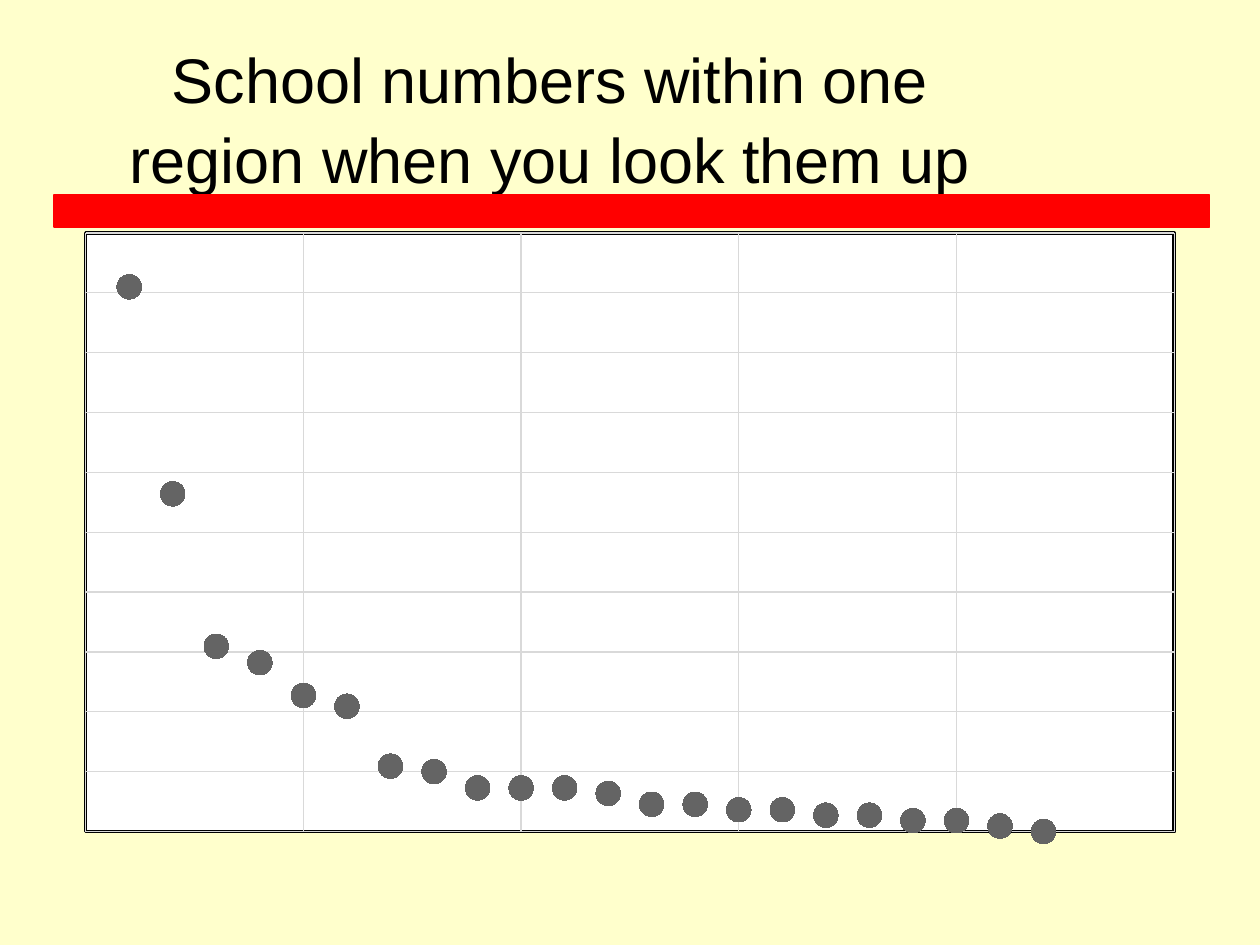
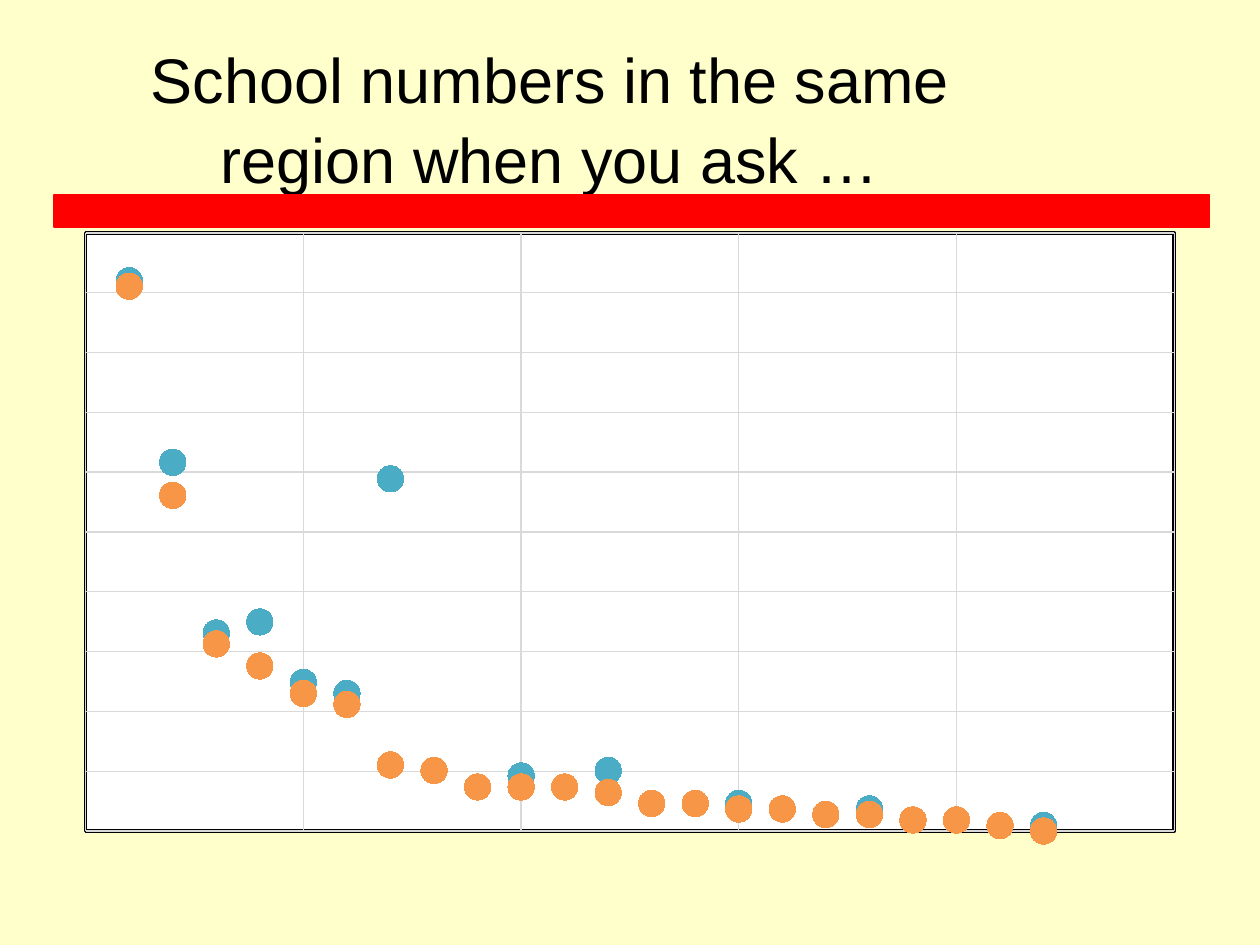
from dataclasses import dataclass

from lxml.etree import _Element
from pptx import Presentation
from pptx.chart.axis import ValueAxis
from pptx.chart.chart import Chart
from pptx.chart.data import XyChartData
from pptx.chart.series import XySeries
from pptx.dml.color import RGBColor
from pptx.enum.chart import XL_CHART_TYPE, XL_MARKER_STYLE
from pptx.enum.shapes import MSO_SHAPE
from pptx.enum.text import MSO_ANCHOR, PP_ALIGN
from pptx.oxml import parse_xml
from pptx.oxml.ns import nsdecls, qn
from pptx.slide import Slide
from pptx.util import Inches, Pt

CREAM, RED, BLACK, WHITE = "FFFFCC", "FF0000", "000000", "FFFFFF"
GREY, ORANGE, BLUE, GRID = "646464", "F79646", "4BACC6", "D9D9D9"
TITLE_BOX = (0.5, 0.3, 7.73, 1.25)
BAND_BOX = (0.43, 1.55, 9.17, 0.25)
CHART_BOX = (0.5, 1.75, 9, 4.95)
PLOT_AREA = {"x": 0.02, "y": 0.02, "w": 0.96, "h": 0.96}
RANK_MAX, RANK_STEP, ROWS = 25, 5, 10


@dataclass
class Counts:
    values: list[int]
    color: str


@dataclass
class SchoolSlide:
    title: str
    top: float
    marker_size: int
    series: list[Counts]


SLIDES = [
    SchoolSlide(
        "School numbers within one region when you look them up", 109.9, 14,
        [Counts([100, 62, 34, 31, 25, 23, 12, 11, 8, 8, 8,
                 7, 5, 5, 4, 4, 3, 3, 2, 2, 1, 0], GREY)]),
    SchoolSlide(
        "School numbers in the same region when you ask …", 108.7, 15,
        [Counts([99, 61, 34, 30, 25, 23, 12, 11, 8, 8, 8,
                 7, 5, 5, 4, 4, 3, 3, 2, 2, 1, 0], ORANGE),
         Counts([100, 67, 36, 38, 27, 25, 64, 11, 8, 10, 8,
                 11, 5, 5, 5, 4, 3, 4, 2, 2, 1, 1], BLUE)]),
]


def rgb(color: str) -> RGBColor:
    return RGBColor.from_string(color)


def inches(box: tuple) -> list[Inches]:
    return [Inches(n) for n in box]


def apply(target: object, values: dict) -> None:
    for name, value in values.items():
        setattr(target, name, value)


def paint(fill, color: str) -> None:
    fill.solid()
    fill.fore_color.rgb = rgb(color)


def add_band(slide: Slide) -> None:
    sp = slide.shapes.add_shape(MSO_SHAPE.RECTANGLE, *inches(BAND_BOX))
    sp.shadow.inherit = False
    paint(sp.fill, RED)
    paint(sp.line.fill, RED)
    sp.line.width = Pt(1)


def set_title(slide: Slide, text: str) -> None:
    sp = slide.shapes.title
    apply(sp, dict(zip(("left", "top", "width", "height"), inches(TITLE_BOX))))
    tf = sp.text_frame
    tf.text = text
    apply(tf, {"word_wrap": True, "vertical_anchor": MSO_ANCHOR.MIDDLE})
    p = tf.paragraphs[0]
    apply(p, {"alignment": PP_ALIGN.CENTER, "line_spacing": 1.05})
    apply(p.font, {"name": "Arial", "size": Pt(36)})
    p.font.color.rgb = rgb(BLACK)


def format_axis(axis: ValueAxis, top: float, step: float) -> None:
    apply(axis, {"minimum_scale": 0, "maximum_scale": top, "major_unit": step,
                 "has_major_gridlines": True, "visible": False})
    line = axis.major_gridlines.format.line
    paint(line.fill, GRID)
    line.width = Pt(0.75)


def format_series(series: XySeries, color: str, size: int) -> None:
    series.format.line.fill.background()
    apply(series.marker, {"style": XL_MARKER_STYLE.CIRCLE, "size": size})
    paint(series.marker.format.fill, color)
    paint(series.marker.format.line.fill, color)


def shape_properties(content: str) -> _Element:
    return parse_xml(f'<c:spPr {nsdecls("c", "a")}>{content}</c:spPr>')


def frame_plot(chart: Chart) -> None:
    root = chart.element.find(qn("c:chart"))
    root.addnext(shape_properties("<a:noFill/><a:ln><a:noFill/></a:ln>"))
    area = root.find(qn("c:plotArea"))
    for layout in area.findall(qn("c:layout")):
        area.remove(layout)
    sizes = "".join(f'<c:{k} val="{v}"/>' for k, v in PLOT_AREA.items())
    area.insert(0, parse_xml(
        f'<c:layout {nsdecls("c")}><c:manualLayout><c:layoutTarget val="inner"/>'
        f'<c:xMode val="edge"/><c:yMode val="edge"/>{sizes}'
        '</c:manualLayout></c:layout>'))
    fill, edge = (f'<a:solidFill><a:srgbClr val="{c}"/></a:solidFill>'
                  for c in (WHITE, BLACK))
    area.append(shape_properties(f'{fill}<a:ln w="{Pt(2)}">{edge}</a:ln>'))


def add_scatter(slide: Slide, content: SchoolSlide) -> None:
    data = XyChartData()
    for number, counts in enumerate(content.series, 1):
        series = data.add_series(f"Series {number}")
        for rank, value in enumerate(counts.values, 1):
            series.add_data_point(rank, value)
    chart = slide.shapes.add_chart(
        XL_CHART_TYPE.XY_SCATTER, *inches(CHART_BOX), data).chart
    apply(chart, {"has_title": False, "has_legend": False})
    apply(chart.font, {"name": "Calibri", "size": Pt(10)})
    chart.font.color.rgb = rgb(BLACK)
    chart.plots[0].vary_by_categories = False
    format_axis(chart.category_axis, RANK_MAX, RANK_STEP)
    format_axis(chart.value_axis, content.top, round(content.top / ROWS, 2))
    for series, counts in zip(chart.plots[0].series, content.series):
        series.smooth = False
        format_series(series, counts.color, content.marker_size)
    frame_plot(chart)


def main() -> None:
    prs = Presentation()
    apply(prs, {"slide_width": Inches(10), "slide_height": Inches(7.5)})
    paint(prs.slide_master.background.fill, CREAM)
    for content in SLIDES:
        slide = prs.slides.add_slide(prs.slide_layouts[5])
        add_band(slide)
        set_title(slide, content.title)
        add_scatter(slide, content)
    prs.save("out.pptx")


if __name__ == "__main__":
    main()
